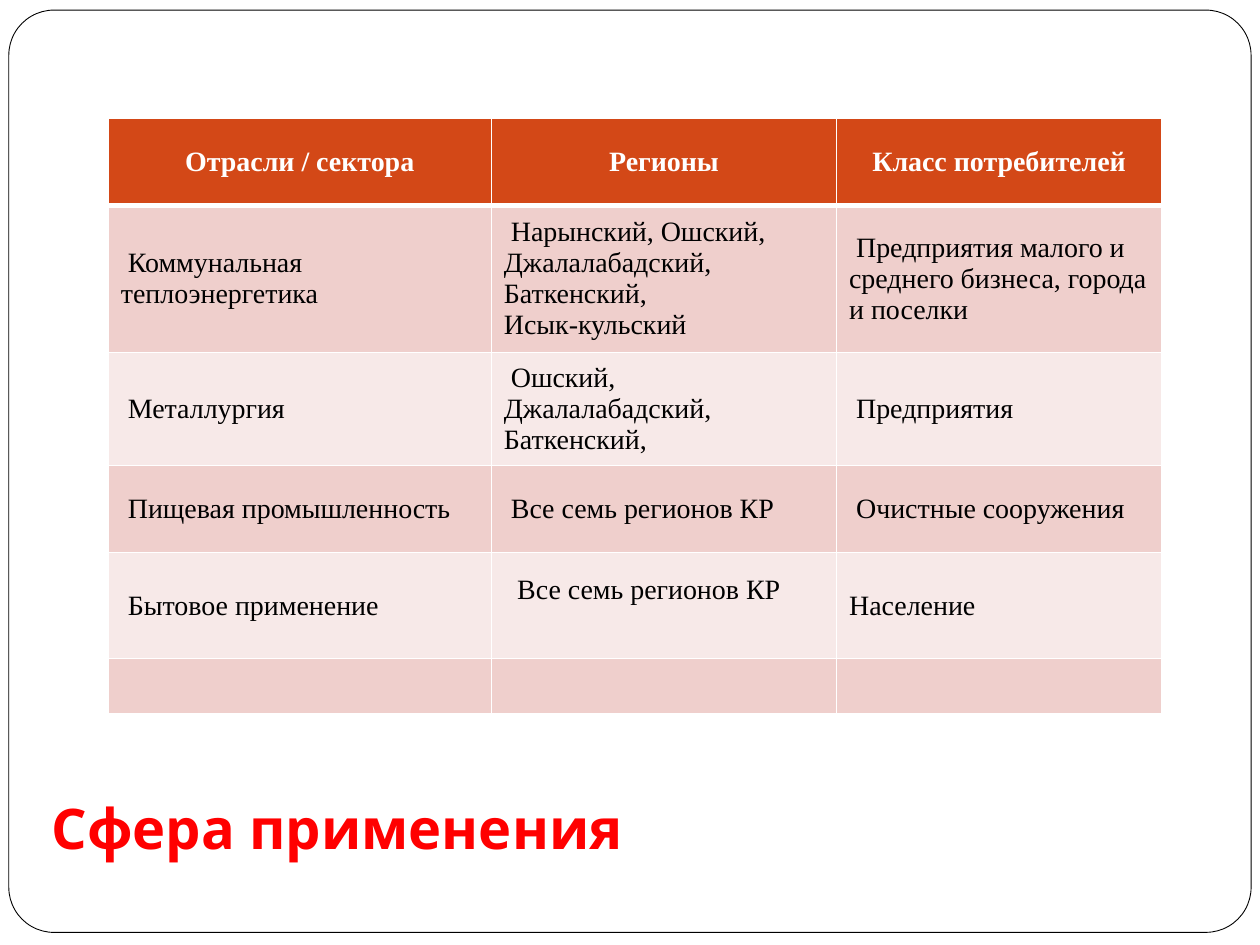
import pptx
import pptx.util
import pptx.dml.color
import pptx.enum.shapes
import pptx.enum.text
import pptx.oxml
import pptx.oxml.ns

Inches, Pt = pptx.util.Inches, pptx.util.Pt
ANCHOR = pptx.enum.text.MSO_ANCHOR
ALIGN = pptx.enum.text.PP_ALIGN

HEAD = ["Отрасли / сектора", "Регионы", "Класс потребителей"]
BODY = [
    [" Коммунальная теплоэнергетика",
     " Нарынский, Ошский, Джалалабадский, Баткенский,\nИсык-кульский",
     " Предприятия малого и среднего бизнеса, города и поселки"],
    [" Металлургия", " Ошский, Джалалабадский, Баткенский,", " Предприятия"],
    [" Пищевая промышленность", " Все семь регионов КР", " Очистные сооружения"],
    [" Бытовое применение", " Все семь регионов КР", "Население"],
    ["", "", ""],
]
TITLE = "Сфера применения"
WIDTHS = [3.04, 2.74, 2.58]
HEIGHTS = [0.69, 1.1, 0.84, 0.69, 0.84, 0.44]
COLORS = {"white": "FFFFFF", "black": "000000", "red": "FF0000",
          "head": "D34817", "odd": "EFCFCC", "even": "F7E9E8"}


def color(name):
    return pptx.dml.color.RGBColor.from_string(COLORS[name])


def paint(shape, name):
    shape.fill.solid()
    shape.fill.fore_color.rgb = color(name)


def write(para, text, font, size, tint, bold):
    run = para.add_run()
    run.text = text
    run.font.name = font
    run.font.size = Pt(size)
    run.font.bold = bold
    run.font.color.rgb = color(tint)


def edge(cell, low):
    """Draw white cell borders; low is the width of the bottom one."""
    props = cell._tc.get_or_add_tcPr()
    sides = [("lnL", 1), ("lnR", 1), ("lnT", 1), ("lnB", low)]
    for spot, (tag, width) in enumerate(sides):
        line = pptx.oxml.parse_xml(
            f'<a:{tag} {pptx.oxml.ns.nsdecls("a")} w="{Pt(width)}"><a:solidFill>'
            f'<a:srgbClr val="{COLORS["white"]}"/></a:solidFill></a:{tag}>')
        props.insert(spot, line)


def add_frame(slide):
    frame = slide.shapes.add_shape(
        pptx.enum.shapes.MSO_SHAPE.ROUNDED_RECTANGLE,
        Inches(0.07), Inches(0.08), Inches(9.86), Inches(7.32))
    frame.adjustments[0] = 0.049
    frame.shadow.inherit = False
    paint(frame, "white")
    frame.line.color.rgb = color("black")
    frame.line.width = Pt(0.5)


def add_title(slide):
    box = slide.shapes.add_textbox(
        Inches(0.31), Inches(6.17), Inches(8.95), Inches(0.76))
    text = box.text_frame
    text.word_wrap = True
    text.vertical_anchor = ANCHOR.BOTTOM
    text.margin_bottom = Inches(0.1)
    write(text.paragraphs[0], TITLE, "Karla", 32, "red", True)


def add_grid(slide):
    rows = [HEAD] + BODY
    grid = slide.shapes.add_table(
        len(rows), len(HEAD), Inches(0.86), Inches(0.94),
        Inches(sum(WIDTHS)), Inches(sum(HEIGHTS))).table
    grid.horz_banding = False
    for col, width in zip(grid.columns, WIDTHS):
        col.width = Inches(width)
    for row, height in zip(grid.rows, HEIGHTS):
        row.height = Inches(height)
    for r, row in enumerate(rows):
        top = r == 0
        fill = "head" if top else "odd" if r % 2 else "even"
        for c, text in enumerate(row):
            cell = grid.cell(r, c)
            cell.vertical_anchor = ANCHOR.MIDDLE
            paint(cell, fill)
            edge(cell, 3 if top else 1)
            for n, part in enumerate(text.split("\n") if text else []):
                frame = cell.text_frame
                para = frame.add_paragraph() if n else frame.paragraphs[0]
                para.alignment = ALIGN.CENTER if top else ALIGN.LEFT
                write(para, part, "Times New Roman", 16,
                      "white" if top else "black", top)
    home = grid.cell(4, 1)  # sits a little higher and further in
    home.margin_left = Inches(0.15)
    home.margin_bottom = Inches(0.3)


def main():
    deck = pptx.Presentation()
    deck.slide_width, deck.slide_height = Inches(10), Inches(7.5)
    slide = deck.slides.add_slide(deck.slide_layouts[6])
    add_frame(slide)
    add_title(slide)
    add_grid(slide)
    deck.save("out.pptx")


if __name__ == "__main__":
    main()
